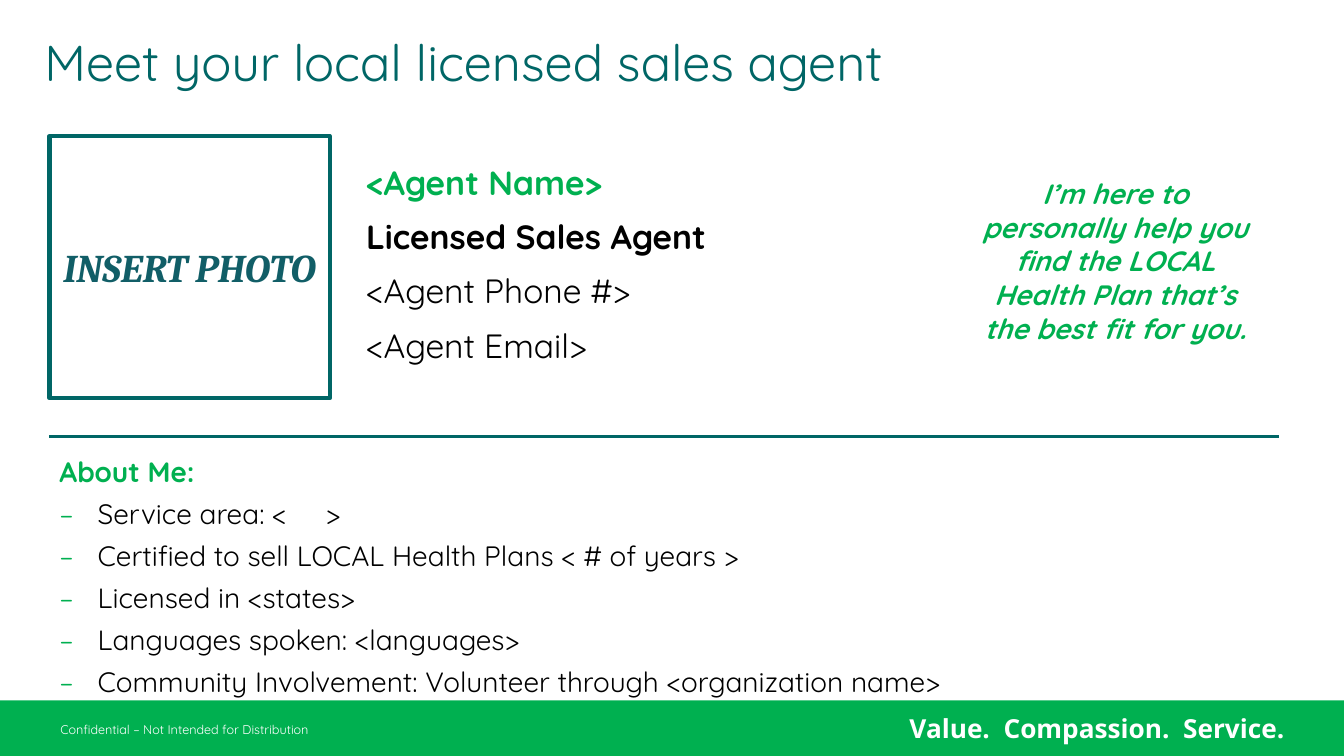
from lxml.etree import SubElement as Sub
from pptx import Presentation
from pptx.dml.color import RGBColor as RGB
from pptx.enum.shapes import MSO_CONNECTOR as Link, MSO_SHAPE as Form
from pptx.enum.text import MSO_ANCHOR as Anchor, MSO_AUTO_SIZE as Fit, PP_ALIGN as Align
from pptx.oxml.ns import qn
from pptx.util import Inches, Pt

INK = {"green": "00B050", "teal": "006666", "deep": "115E67", "black": "000000", "white": "FFFFFF"}

deck = Presentation()
deck.slide_width, deck.slide_height = Inches(13.33), Inches(7.5)
slide = deck.slides.add_slide(deck.slide_layouts[5])
shapes = slide.shapes


def area(x, y, w, h):
    wide, high = deck.slide_width / 100, deck.slide_height / 100
    return [round(n) for n in (x * wide, y * high, w * wide, h * high)]


def write(para, text, size, color, bold=False, slant=False, face="Quicksand"):
    run = para.add_run()
    run.text = text
    font = run.font
    font.name, font.size, font.bold, font.italic = face, Pt(size), bold, slant
    font.color.rgb = RGB.from_string(INK[color])
    return run


bar = shapes.add_shape(Form.RECTANGLE, *area(0, 92.65, 100, 7.4))
bar.shadow.inherit = False
bar.fill.solid()
bar.fill.fore_color.rgb = RGB.from_string(INK["green"])
bar.line.fill.background()

title = shapes.title
title.left, title.top, title.width, title.height = area(2.55, 4.27, 86.6, 8.8)
frame = title.text_frame
frame.auto_size, frame.word_wrap = Fit.NONE, True
frame.vertical_anchor = Anchor.MIDDLE
para = frame.paragraphs[0]
para.alignment, para.line_spacing = Align.LEFT, 0.9
write(para, "Meet your local licensed sales agent", 36, "teal")

boxes = {}
for name, place in {
    "motto": (66.7, 93.3, 31.2, 6.1),
    "notice": (3.75, 94.8, 26, 3.3),
    "quote": (72.1, 22.7, 21.75, 23.7),
    "about": (3.68, 59.5, 92.65, 33.9),
    "agent": (26.5, 20.7, 39.6, 28.5),
}.items():
    boxes[name] = shapes.add_textbox(*area(*place)).text_frame
    boxes[name].word_wrap = True

motto = boxes["motto"]
motto.margin_left = motto.margin_right = Inches(0.13)
motto.margin_top = motto.margin_bottom = Inches(0.07)
write(motto.paragraphs[0], "Value.  Compassion.  Service.", 18.7, "white", True, face="Open Sans")
write(boxes["notice"].paragraphs[0], "Confidential – Not Intended for Distribution", 9, "white")

quote = boxes["quote"].paragraphs[0]
quote.alignment = Align.CENTER
write(quote, "I’m here to personally help you find the LOCAL Health Plan that’s the best fit for you.",
      20, "green", True, True)

about = boxes["about"]
head = about.paragraphs[0]
head.space_after = Pt(3)
write(head, "About Me:", 20, "green", True)
for fact in (
    "Service area: <\t>",
    "Certified to sell LOCAL Health Plans < # of years >",
    "Licensed in <states>",
    "Languages spoken: <languages>",
    "Community Involvement: Volunteer through <organization name>",
):
    para = about.add_paragraph()
    para.space_before = para.space_after = Pt(3)
    props = para._p.get_or_add_pPr()
    props.set("marL", str(Inches(0.38)))
    props.set("indent", str(-Inches(0.38)))
    Sub(Sub(props, qn("a:buClr")), qn("a:srgbClr"), val=INK["green"])
    Sub(props, qn("a:buFont"), typeface="Quicksand")
    Sub(props, qn("a:buChar"), char="‒")
    if "\t" in fact:
        Sub(Sub(props, qn("a:tabLst")), qn("a:tab"), pos=str(Inches(2.64)), algn="l")
    write(para, fact, 20, "black")

rule = shapes.add_connector(Link.STRAIGHT, *area(3.68, 57.75, 95.2, 57.75))
rule.line.color.rgb = RGB.from_string(INK["teal"])
rule.line.width = Pt(2.25)
Sub(rule._element.spPr, qn("a:effectLst"))

photo = shapes.add_shape(Form.RECTANGLE, *area(3.68, 18, 20.85, 34.7))
photo.shadow.inherit = False
photo.fill.background()
photo.line.color.rgb = RGB.from_string(INK["teal"])
photo.line.width = Pt(3)
photo.text_frame.word_wrap = True
photo.text_frame.vertical_anchor = Anchor.MIDDLE
label = photo.text_frame.paragraphs[0]
label.alignment = Align.CENTER
run = write(label, "INSERT PHOTO", 28, "deep", True, True, "Cambria")
run.font._element.set("spc", "-30")

agent = boxes["agent"]
for row, (text, color, bold) in enumerate((
    ("<Agent Name>", "green", True),
    ("Licensed Sales Agent", "black", True),
    ("<Agent Phone #>", "black", False),
    ("<Agent Email>", "black", False),
)):
    para = agent.add_paragraph() if row else agent.paragraphs[0]
    if row:
        para.space_before = Pt(10)
    write(para, text, 24, color, bold)

deck.save("out.pptx")
